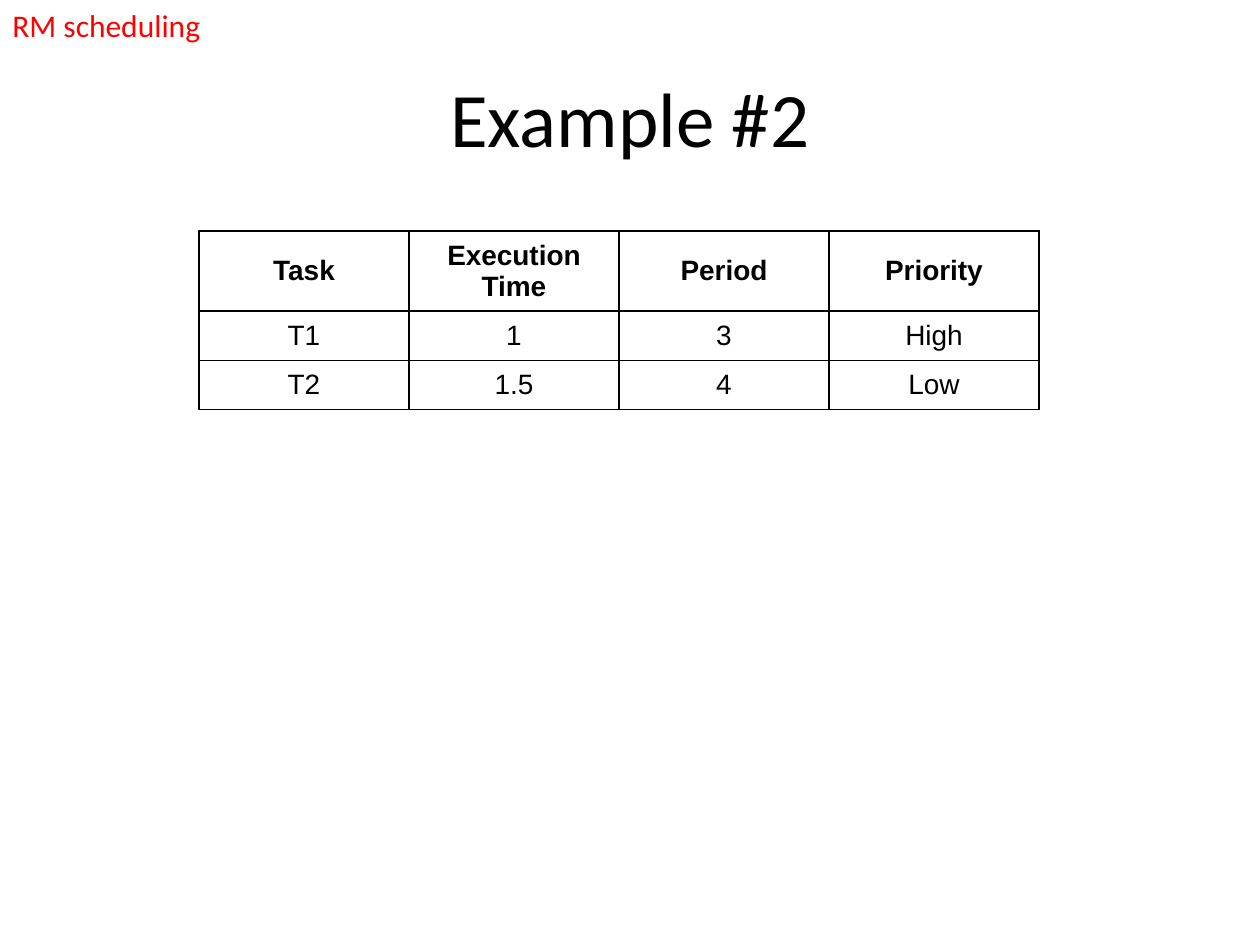
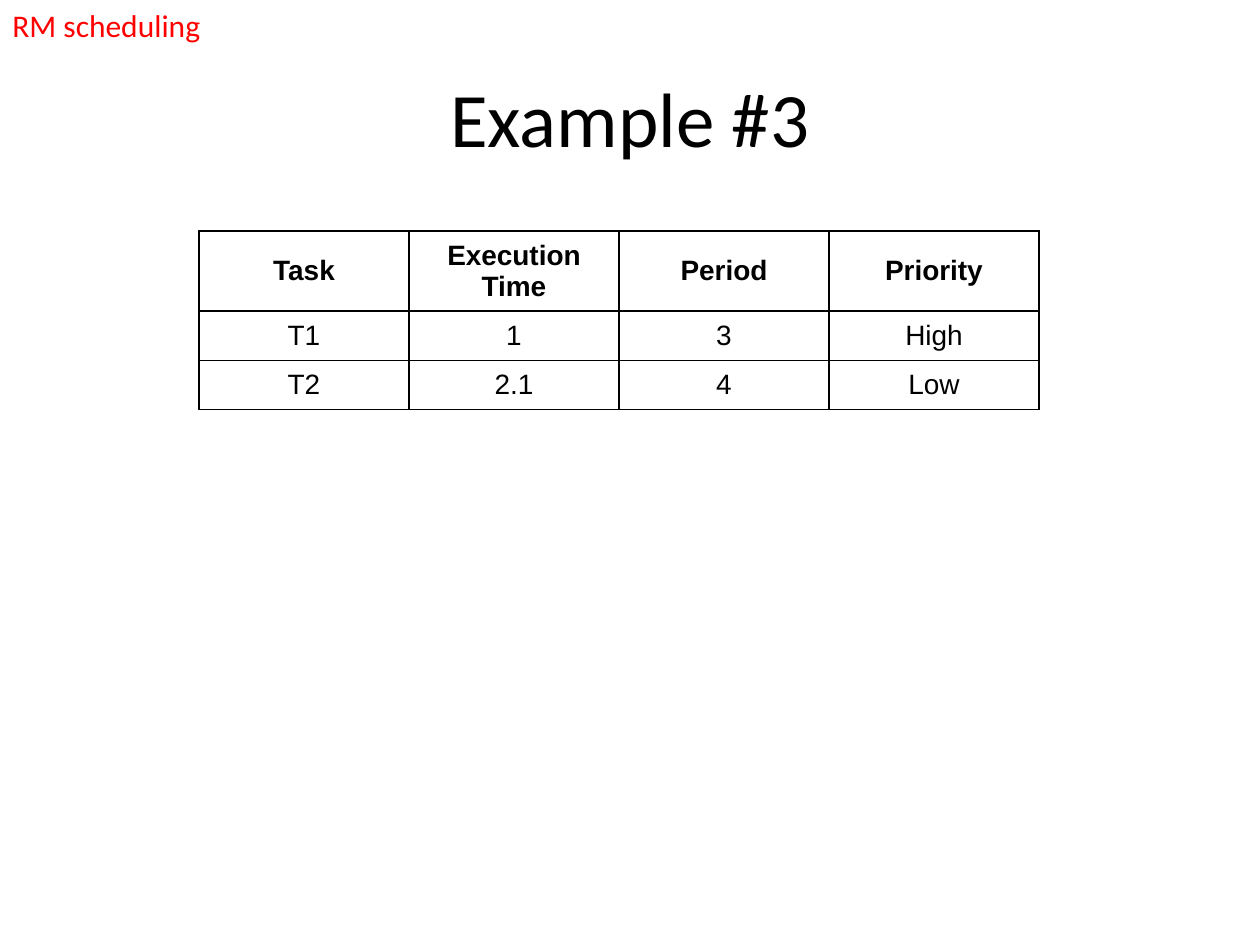
from lxml import etree
from pptx import Presentation
from pptx import util as u
from pptx.dml.color import RGBColor
from pptx.enum import text
from pptx.oxml.ns import qn

PX = u.Inches(1) / 126
BLACK, RED = "000000", "FF0000"
HEADER = ("Task", "Execution Time", "Period", "Priority")
COL_WIDTH = 210
ROW_HEIGHTS = (79, 49, 49)
CELL_MARGIN = 9


def px(n):
    return u.Emu(round(n * PX))


def rgb(color):
    return RGBColor.from_string(color)


def style(p, font, size, color, bold=False, align=text.PP_ALIGN.CENTER):
    p.alignment = align
    for r in p.runs:
        r.font.name, r.font.size, r.font.bold = font, u.Pt(size), bold
        r.font.color.rgb = rgb(color)


def add_title(s, title):
    sp = s.shapes.title
    sp.left, sp.top, sp.width, sp.height = px(63), px(38), px(1134), px(157)
    tf = sp.text_frame
    tf.text = title
    tf.vertical_anchor = text.MSO_ANCHOR.MIDDLE
    style(tf.paragraphs[0], "Calibri", 44, BLACK)


def add_topic(s, topic):
    tf = s.shapes.add_textbox(0, 0, px(215), px(50)).text_frame
    tf.text = topic
    tf.word_wrap = False
    tf.auto_size = text.MSO_AUTO_SIZE.SHAPE_TO_FIT_TEXT
    style(tf.paragraphs[0], "Calibri", 18, RED, align=text.PP_ALIGN.LEFT)


def add_borders(cell, color, width):
    tc_pr = cell._tc.get_or_add_tcPr()
    for side in ("lnL", "lnR", "lnT", "lnB"):
        ln = etree.SubElement(tc_pr, qn(f"a:{side}"), w=str(u.Pt(width)))
        fill = etree.SubElement(ln, qn("a:solidFill"))
        etree.SubElement(fill, qn("a:srgbClr"), val=color)


def format_cell(cell, value, bold):
    cell.text = value
    cell.vertical_anchor = text.MSO_ANCHOR.MIDDLE
    cell.margin_left = cell.margin_right = px(CELL_MARGIN)
    cell.margin_top = cell.margin_bottom = px(CELL_MARGIN)
    add_borders(cell, BLACK, 1)
    cell.fill.background()
    style(cell.text_frame.paragraphs[0], "Arial", 16, BLACK, bold)


def add_task_table(s, tasks):
    rows = (HEADER, *tasks)
    table = s.shapes.add_table(len(rows), len(HEADER), px(199), px(231),
                               px(COL_WIDTH * len(HEADER)),
                               px(sum(ROW_HEIGHTS))).table
    for col in table.columns:
        col.width = px(COL_WIDTH)
    for i, (values, height) in enumerate(zip(rows, ROW_HEIGHTS)):
        table.rows[i].height = px(height)
        for j, value in enumerate(values):
            format_cell(table.cell(i, j), value, bold=i == 0)


def add_example(prs, number, t2_time):
    s = prs.slides.add_slide(prs.slide_layouts[5])
    add_title(s, f"Example #{number}")
    add_task_table(s, (("T1", "1", "3", "High"), ("T2", t2_time, "4", "Low")))
    add_topic(s, "RM scheduling")


def main():
    prs = Presentation()
    prs.slide_width, prs.slide_height = px(1260), px(945)
    add_example(prs, 2, "1.5")
    add_example(prs, 3, "2.1")
    prs.save("out.pptx")


if __name__ == "__main__":
    main()
